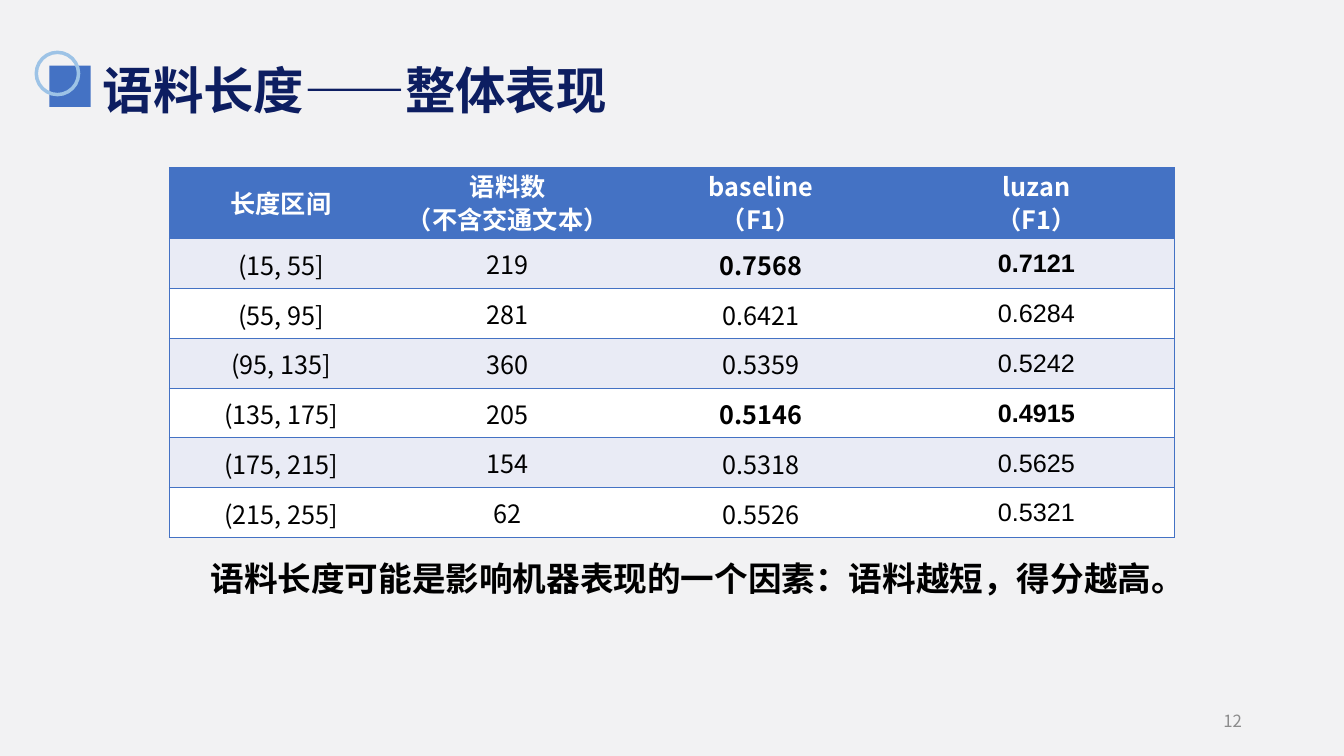
from dataclasses import dataclass

from lxml.etree import SubElement
from pptx import Presentation
from pptx.dml.color import RGBColor
from pptx.enum.shapes import MSO_SHAPE
from pptx.enum.text import MSO_ANCHOR, MSO_AUTO_SIZE, PP_ALIGN
from pptx.oxml.ns import qn
from pptx.slide import Slide
from pptx.table import _Cell
from pptx.text.text import TextFrame
from pptx.util import Pt

BLUE = RGBColor(0x44, 0x72, 0xC4)
LIGHT_BLUE = RGBColor(0x9D, 0xC3, 0xE6)
NAVY = RGBColor(0x0D, 0x1E, 0x61)
GRAY = RGBColor(0x8C, 0x8C, 0x8C)
BACKGROUND = RGBColor(0xF2, 0xF2, 0xF3)
BAND = RGBColor(0xE9, 0xEB, 0xF5)
WHITE = RGBColor(0xFF, 0xFF, 0xFF)
BLACK = RGBColor(0x00, 0x00, 0x00)
CJK_FONT = "Noto Sans CJK SC"
LATIN_FONT = "Arial"


@dataclass(frozen=True)
class TextStyle:
    size: float
    color: RGBColor
    bold: bool = False
    align: PP_ALIGN = PP_ALIGN.CENTER
    font: str = CJK_FONT
    line_spacing: float | None = None


@dataclass(frozen=True)
class LengthRange:
    label: str
    count: str
    baseline: str
    luzan: str
    bold_scores: bool = False


HEADERS = ["长度区间", "语料数\n（不含交通文本）", "baseline\n（F1）", "luzan\n（F1）"]
LENGTH_RANGES = [
    LengthRange("(15, 55]", "219", "0.7568", "0.7121", True),
    LengthRange("(55, 95]", "281", "0.6421", "0.6284"),
    LengthRange("(95, 135]", "360", "0.5359", "0.5242"),
    LengthRange("(135, 175]", "205", "0.5146", "0.4915", True),
    LengthRange("(175, 215]", "154", "0.5318", "0.5625"),
    LengthRange("(215, 255]", "62", "0.5526", "0.5321"),
]
COLUMN_WIDTHS = [159.2, 165, 196.8, 196.8]
COLUMN_SIDES = ["LTB", "TB", "TB", "RTB"]
ROW_HEIGHTS = [50.6] + [35.57] * len(LENGTH_RANGES)


def write_text(frame: TextFrame, text: str, style: TextStyle) -> None:
    frame.text = text
    frame.word_wrap = True
    frame.vertical_anchor = MSO_ANCHOR.MIDDLE
    for paragraph in frame.paragraphs:
        paragraph.alignment = style.align
        if style.line_spacing:
            paragraph.line_spacing = style.line_spacing
        font = paragraph.font
        font.size = Pt(style.size)
        font.bold = style.bold
        font.color.rgb = style.color
        font.name = style.font
        defaults = paragraph._p.pPr.find(qn("a:defRPr"))
        SubElement(defaults, qn("a:ea")).set("typeface", style.font)


def set_borders(cell: _Cell, visible_sides: str) -> None:
    properties = cell._tc.get_or_add_tcPr()
    for position, side in enumerate("LRTB"):
        border = properties.makeelement(qn(f"a:ln{side}"), {"w": str(Pt(1))})
        properties.insert(position, border)
        if side in visible_sides:
            fill = SubElement(border, qn("a:solidFill"))
            SubElement(fill, qn("a:srgbClr")).set("val", str(BLUE))
        else:
            SubElement(border, qn("a:noFill"))


def fill_cell(cell: _Cell, text: str, style: TextStyle, fill: RGBColor, sides: str) -> None:
    write_text(cell.text_frame, text, style)
    cell.vertical_anchor = MSO_ANCHOR.MIDDLE
    cell.fill.solid()
    cell.fill.fore_color.rgb = fill
    set_borders(cell, sides)


def draw_emblem(slide: Slide) -> None:
    square = slide.shapes.add_shape(MSO_SHAPE.RECTANGLE, Pt(35.3), Pt(46.8), Pt(29.5), Pt(29.5))
    square.shadow.inherit = False
    square.fill.solid()
    square.fill.fore_color.rgb = BLUE
    square.line.fill.background()
    ring = slide.shapes.add_shape(MSO_SHAPE.OVAL, Pt(25.9), Pt(37.4), Pt(30.2), Pt(30.2))
    ring.shadow.inherit = False
    ring.fill.background()
    ring.line.color.rgb = LIGHT_BLUE
    ring.line.width = Pt(2.5)


def draw_title(slide: Slide) -> None:
    title = slide.shapes.title
    title.left, title.top, title.width, title.height = Pt(66.2), Pt(45.4), Pt(828), Pt(42.5)
    style = TextStyle(36, NAVY, True, PP_ALIGN.LEFT, line_spacing=0.9)
    write_text(title.text_frame, "语料长度——整体表现", style)
    title.text_frame.auto_size = MSO_AUTO_SIZE.NONE


def draw_scores(slide: Slide) -> None:
    table = slide.shapes.add_table(
        len(ROW_HEIGHTS), len(HEADERS),
        Pt(121), Pt(120), Pt(sum(COLUMN_WIDTHS)), Pt(sum(ROW_HEIGHTS)),
    ).table
    table.first_row = False
    table.horz_banding = False
    for column, width in zip(table.columns, COLUMN_WIDTHS):
        column.width = Pt(width)
    for row, height in zip(table.rows, ROW_HEIGHTS):
        row.height = Pt(height)

    header_style = TextStyle(18, WHITE, True, line_spacing=0.9)
    for index, header in enumerate(HEADERS):
        cell = table.cell(0, index)
        fill_cell(cell, header, header_style, BLUE, COLUMN_SIDES[index])
        cell.margin_top = cell.margin_bottom = Pt(0)
    for row_index, entry in enumerate(LENGTH_RANGES, 1):
        band = BAND if row_index % 2 else WHITE
        values = [entry.label, entry.count, entry.baseline, entry.luzan]
        for index, value in enumerate(values):
            cell = table.cell(row_index, index)
            font = LATIN_FONT if index == 3 else CJK_FONT
            style = TextStyle(18, BLACK, entry.bold_scores and index >= 2, font=font)
            fill_cell(cell, value, style, band, COLUMN_SIDES[index])
            if index != 1:
                cell.margin_left = cell.margin_right = cell.margin_top = Pt(0.75)
                cell.margin_bottom = Pt(0)


def draw_conclusion(slide: Slide) -> None:
    conclusion = slide.shapes.add_shape(
        MSO_SHAPE.ROUNDED_RECTANGLE, Pt(143.3), Pt(383.8), Pt(741.6), Pt(57.6)
    )
    conclusion.adjustments[0] = 0
    conclusion.shadow.inherit = False
    conclusion.fill.background()
    conclusion.line.fill.background()
    frame = conclusion.text_frame
    frame.margin_top = frame.margin_bottom = Pt(14.4)
    style = TextStyle(24, BLACK, True, PP_ALIGN.JUSTIFY)
    write_text(frame, "语料长度可能是影响机器表现的一个因素：语料越短，得分越高。", style)
    frame.auto_size = MSO_AUTO_SIZE.SHAPE_TO_FIT_TEXT


def draw_page_number(slide: Slide) -> None:
    number = slide.shapes.add_textbox(Pt(678.2), Pt(500.4), Pt(216), Pt(28.8))
    write_text(number.text_frame, "12", TextStyle(12, GRAY, align=PP_ALIGN.RIGHT))


def main() -> None:
    presentation = Presentation()
    presentation.slide_width, presentation.slide_height = Pt(960), Pt(540)
    slide = presentation.slides.add_slide(presentation.slide_layouts[5])
    slide.background.fill.solid()
    slide.background.fill.fore_color.rgb = BACKGROUND
    draw_emblem(slide)
    draw_title(slide)
    draw_page_number(slide)
    draw_conclusion(slide)
    draw_scores(slide)
    presentation.save("out.pptx")


if __name__ == "__main__":
    main()
